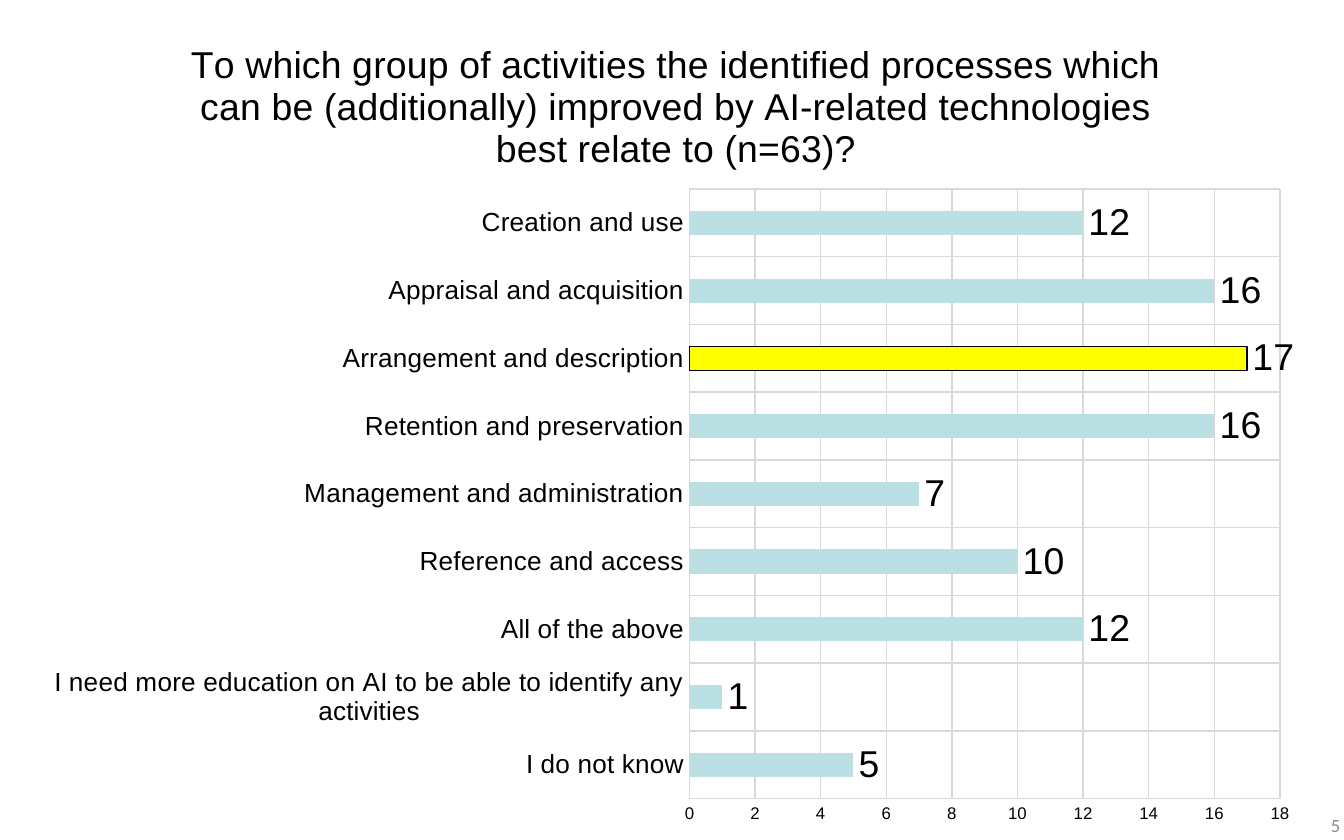
from lxml import etree
from pptx import Presentation
from pptx import util as u
from pptx.chart.data import CategoryChartData
from pptx.dml.color import RGBColor
from pptx.enum import chart as ch, text
from pptx.oxml.ns import qn


def color(hex_code):
    return RGBColor.from_string(hex_code)


def place(parent, index, **fractions):
    for old in parent.findall(qn("c:layout")):
        parent.remove(old)
    layout = etree.Element(qn("c:layout"))
    manual = etree.SubElement(layout, qn("c:manualLayout"))
    if "w" in fractions:
        etree.SubElement(manual, qn("c:layoutTarget"), val="inner")
    for axis in "xy":
        etree.SubElement(manual, qn(f"c:{axis}Mode"), val="edge")
    for side, fraction in fractions.items():
        etree.SubElement(manual, qn(f"c:{side}"), val=str(fraction))
    parent.insert(index, layout)


answers = {
    "I do not know": 5,
    "I need more education on AI to be able to identify any activities": 1,
    "All of the above": 12,
    "Reference and access": 10,
    "Management and administration": 7,
    "Retention and preservation": 16,
    "Arrangement and description": 17,
    "Appraisal and acquisition": 16,
    "Creation and use": 12,
}

prs = Presentation()
prs.slide_width, prs.slide_height = u.Cm(25.4), u.Cm(15.88)
slide = prs.slides.add_slide(prs.slide_layouts[6])

survey = CategoryChartData()
survey.categories = list(answers)
survey.add_series("Series 1", list(answers.values()))
chart = slide.shapes.add_chart(
    ch.XL_CHART_TYPE.BAR_CLUSTERED, u.Cm(0.56), u.Cm(0), u.Cm(24.31), u.Cm(15.88), survey
).chart
chart.has_legend = False
chart.font.name = "Arial"
chart.font.size = u.Pt(10)
chart.font.color.rgb = color("000000")

question = chart.chart_title.text_frame
question.text = (
    "To which group of activities the identified processes which can be "
    "(additionally) improved by AI-related technologies best relate to (n=63)?"
)
question_font = question.paragraphs[0].runs[0].font
question_font.name = "Arial"
question_font.size = u.Pt(20)
question_font.bold = False
question_font.color.rgb = color("000000")
place(chart.chart_title._element, 1, x=0.12, y=0.04)
place(chart.plots[0]._element.getparent(), 0, x=0.513, y=0.225, w=0.459, h=0.726)

for axis, size in ((chart.category_axis, 14), (chart.value_axis, 9)):
    axis.major_tick_mark = axis.minor_tick_mark = ch.XL_TICK_MARK.NONE
    axis.has_major_gridlines = True
    axis.major_gridlines.format.line.color.rgb = color("D9D9D9")
    axis.major_gridlines.format.line.width = u.Pt(0.75)
    axis.tick_labels.font.name = "Arial"
    axis.tick_labels.font.size = u.Pt(size)
    axis.tick_labels.font.color.rgb = color("000000")
chart.category_axis.format.line.color.rgb = color("D9D9D9")
chart.category_axis.format.line.width = u.Pt(0.75)
chart.value_axis.format.line.fill.background()
chart.value_axis.minimum_scale = 0
chart.value_axis.maximum_scale = 18
chart.value_axis.major_unit = 2

bars = chart.plots[0]
bars.gap_width = 182
bars.vary_by_categories = False
counts = bars.series[0]
counts.format.fill.solid()
counts.format.fill.fore_color.rgb = color("BBE0E3")
top_answer = counts.points[list(answers).index("Arrangement and description")].format
top_answer.fill.solid()
top_answer.fill.fore_color.rgb = color("FFFF00")
top_answer.line.color.rgb = color("000000")
top_answer.line.width = u.Pt(0.75)

labels = counts.data_labels
labels.show_value = True
labels.position = ch.XL_LABEL_POSITION.OUTSIDE_END
labels.font.name = "Arial"
labels.font.size = u.Pt(20)
labels.font.color.rgb = color("000000")

page = slide.shapes.add_textbox(u.Cm(19.41), u.Cm(15.34), u.Cm(5.92), u.Cm(0.53)).text_frame
page.word_wrap = True
page.margin_left = page.margin_right = page.margin_top = page.margin_bottom = 0
page.vertical_anchor = text.MSO_ANCHOR.MIDDLE
page.text = "5"
page.paragraphs[0].alignment = text.PP_ALIGN.RIGHT
page_font = page.paragraphs[0].runs[0].font
page_font.name = "Calibri"
page_font.size = u.Pt(10)
page_font.color.rgb = color("8C8C8C")

prs.save("out.pptx")
